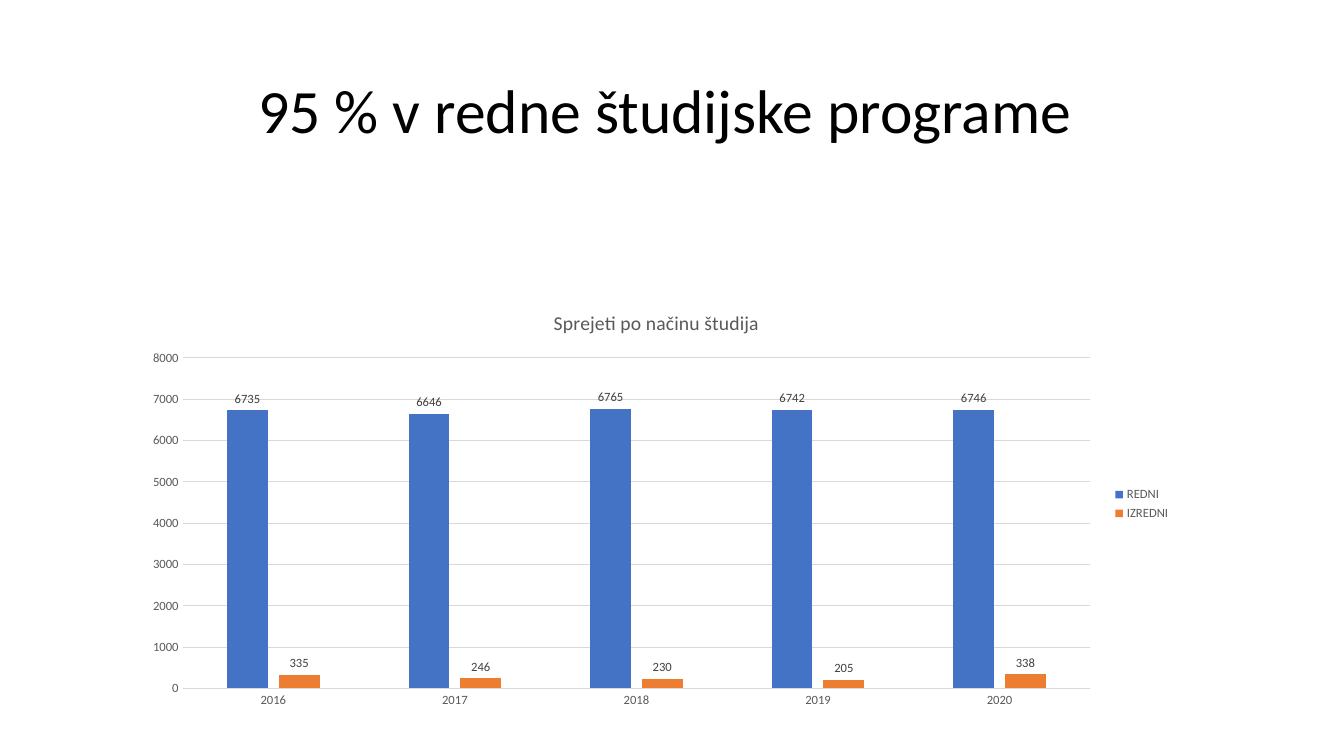
import pptx
import pptx.chart.data
import pptx.dml.color
import pptx.enum.chart
import pptx.enum.text
import pptx.util

PX = 9144  # EMU per px, 100 px to the inch


def px(length):
    return pptx.util.Emu(length * PX)


def colour(hex_string):
    return pptx.dml.color.RGBColor.from_string(hex_string)


class SlideBuilder:
    """Holds the style and the current slide."""

    font_name = "Calibri"
    title_colour = "000000"
    text_colour = "595959"
    label_colour = "404040"
    line_colour = "D9D9D9"

    def __init__(self, slide):
        self.slide = slide

    def style_font(self, font, size, hex_string):
        font.name = self.font_name
        font.size = pptx.util.Pt(size)
        font.bold = False
        font.color.rgb = colour(hex_string)

    def style_line(self, line):
        line.color.rgb = colour(self.line_colour)
        line.width = pptx.util.Pt(0.75)

    def heading(self, text, left, top, width, height):
        box = self.slide.shapes.add_textbox(px(left), px(top), px(width), px(height))
        frame = box.text_frame
        frame.word_wrap = True
        frame.vertical_anchor = pptx.enum.text.MSO_ANCHOR.MIDDLE
        frame.text = text
        para = frame.paragraphs[0]
        para.alignment = pptx.enum.text.PP_ALIGN.CENTER
        para.line_spacing = 0.9
        self.style_font(para.runs[0].font, 44, self.title_colour)

    def column_chart(self, title, years, series, left, top, width, height):
        data = pptx.chart.data.CategoryChartData()
        data.categories = years
        for name, values, _ in series:
            data.add_series(name, values)
        chart = self.slide.shapes.add_chart(
            pptx.enum.chart.XL_CHART_TYPE.COLUMN_CLUSTERED,
            px(left), px(top), px(width), px(height), data).chart
        self.style_font(chart.font, 10, self.title_colour)

        # Chart title
        chart.has_title = True
        chart.chart_title.include_in_layout = False
        frame = chart.chart_title.text_frame
        frame.text = title
        self.style_font(frame.paragraphs[0].runs[0].font, 14, self.text_colour)

        # Legend
        chart.has_legend = True
        chart.legend.position = pptx.enum.chart.XL_LEGEND_POSITION.RIGHT
        chart.legend.include_in_layout = False
        self.style_font(chart.legend.font, 9, self.text_colour)

        # Axes
        for axis in (chart.category_axis, chart.value_axis):
            axis.major_tick_mark = pptx.enum.chart.XL_TICK_MARK.NONE
            axis.minor_tick_mark = pptx.enum.chart.XL_TICK_MARK.NONE
            self.style_font(axis.tick_labels.font, 9, self.text_colour)
        self.style_line(chart.category_axis.format.line)
        chart.value_axis.format.line.fill.background()
        chart.value_axis.minimum_scale = 0
        chart.value_axis.maximum_scale = 8000
        chart.value_axis.major_unit = 1000
        self.style_line(chart.value_axis.major_gridlines.format.line)

        # Columns and their labels
        plot = chart.plots[0]
        plot.vary_by_categories = False
        plot.gap_width = 219
        plot.overlap = -27
        for columns, (_, _, fill) in zip(plot.series, series):
            columns.format.fill.solid()
            columns.format.fill.fore_color.rgb = colour(fill)
            columns.invert_if_negative = False
            labels = columns.data_labels
            labels.show_value = True
            labels.position = pptx.enum.chart.XL_LABEL_POSITION.OUTSIDE_END
            self.style_font(labels.font, 9, self.label_colour)


def main():
    deck = pptx.Presentation()
    deck.slide_width = px(1333)
    deck.slide_height = px(750)
    page = SlideBuilder(deck.slides.add_slide(deck.slide_layouts[6]))

    page.heading("95 % v redne študijske programe ", 92, 40, 1150, 145)
    page.column_chart(
        "Sprejeti po načinu študija",
        [str(year) for year in range(2016, 2021)],
        [("REDNI", (6735, 6646, 6765, 6742, 6746), "4472C4"),
         ("IZREDNI", (335, 246, 230, 205, 338), "ED7D31")],
        131, 290, 1040, 420)

    deck.save("out.pptx")


if __name__ == "__main__":
    main()
